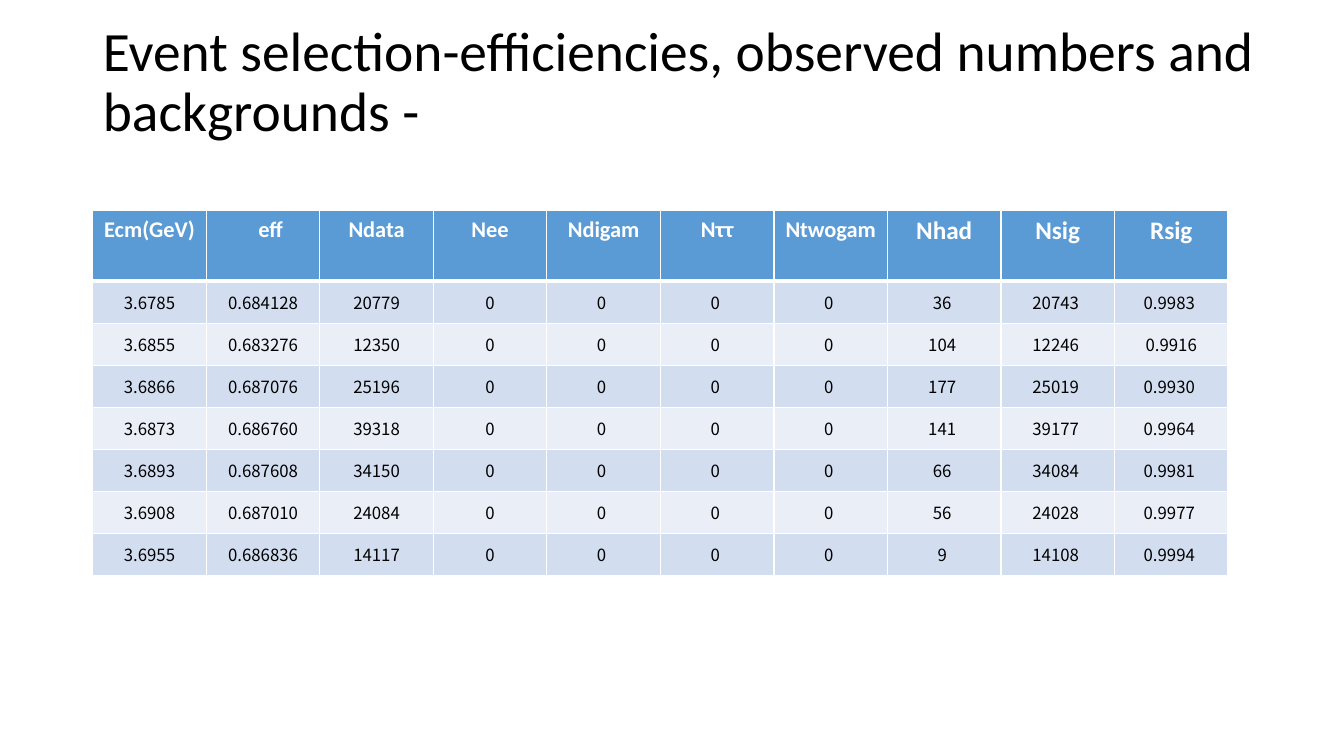
from dataclasses import dataclass

from lxml import etree
from pptx import Presentation
from pptx.dml.color import RGBColor
from pptx.enum.text import MSO_ANCHOR, MSO_AUTO_SIZE, PP_ALIGN
from pptx.oxml.ns import qn
from pptx.util import Inches, Pt

TOP, MIDDLE = MSO_ANCHOR.TOP, MSO_ANCHOR.MIDDLE
LEFT, CENTER = PP_ALIGN.LEFT, PP_ALIGN.CENTER
NO_AUTOFIT = MSO_AUTO_SIZE.NONE
TITLE_ONLY = 5

TITLE = "Event selection-efficiencies, observed numbers and backgrounds -"
HEADERS = ["Ecm(GeV)", "eff", "Ndata", "Nee", "Ndigam", "Nττ", "Ntwogam",
           "Nhad", "Nsig", "Rsig"]
LARGE_HEADERS = {"Nhad", "Nsig", "Rsig"}
# Energy, efficiency, Ndata, Nhad, Nsig, Rsig; the other backgrounds are all zero
MEASUREMENTS = [
    ("3.6785", "0.684128", "20779", "36", "20743", "0.9983"),
    ("3.6855", "0.683276", "12350", "104", "12246", "0.9916"),
    ("3.6866", "0.687076", "25196", "177", "25019", "0.9930"),
    ("3.6873", "0.686760", "39318", "141", "39177", "0.9964"),
    ("3.6893", "0.687608", "34150", "66", "34084", "0.9981"),
    ("3.6908", "0.687010", "24084", "56", "24028", "0.9977"),
    ("3.6955", "0.686836", "14117", "9", "14108", "0.9994"),
]
ZERO_BACKGROUNDS = ("0",) * 4


@dataclass(frozen=True)
class Theme:
    text: str = "000000"
    header_text: str = "FFFFFF"
    header_fill: str = "5B9BD5"
    bands: tuple = ("D2DEEF", "EAEFF7")
    border: str = "FFFFFF"
    font: str = "Calibri"
    number_font: str = "Noto Sans CJK SC"
    title_size: float = 39.6
    header_size: float = 16
    large_header_size: float = 18
    number_size: float = 12


class SlideBuilder:
    def __init__(self, slide, theme):
        self.slide = slide
        self.theme = theme

    def format_text(self, paragraph, font_name, size, color, bold, alignment):
        paragraph.alignment = alignment
        for run in paragraph.runs:
            run.font.name = font_name
            run.font.size = Pt(size)
            run.font.bold = bold
            run.font.color.rgb = RGBColor.from_string(color)

    def add_title(self, text, left, top, width, height):
        title = self.slide.shapes.title
        title.left, title.top = Inches(left), Inches(top)
        title.width, title.height = Inches(width), Inches(height)
        frame = title.text_frame
        frame.text = text
        frame.word_wrap = True
        frame.auto_size = NO_AUTOFIT
        frame.vertical_anchor = MIDDLE
        frame.margin_bottom = Inches(0.65)
        paragraph = frame.paragraphs[0]
        paragraph.line_spacing = 0.9
        self.format_text(paragraph, self.theme.font, self.theme.title_size,
                         self.theme.text, False, LEFT)

    def set_borders(self, cell, **widths):
        """Draw the sides lnL, lnR, lnT and lnB, given in points in that order."""
        properties = cell._tc.get_or_add_tcPr()
        for side, width in widths.items():
            line = etree.SubElement(properties, qn(f"a:{side}"), w=str(Pt(width)))
            fill = etree.SubElement(line, qn("a:solidFill"))
            etree.SubElement(fill, qn("a:srgbClr"), val=self.theme.border)

    def fill_cell(self, cell, color):
        cell.fill.solid()
        cell.fill.fore_color.rgb = RGBColor.from_string(color)

    def format_header(self, cell, text):
        theme = self.theme
        self.set_borders(cell, lnL=1, lnR=1, lnT=1, lnB=3)
        self.fill_cell(cell, theme.header_fill)
        cell.text_frame.text = text
        cell.vertical_anchor = TOP
        if text == "eff":
            cell.margin_left = Inches(0.25)
        size = theme.large_header_size if text in LARGE_HEADERS else theme.header_size
        self.format_text(cell.text_frame.paragraphs[0], theme.font, size,
                         theme.header_text, True, CENTER)

    def format_number(self, cell, text, row, column):
        theme = self.theme
        self.set_borders(cell, lnL=1, lnR=1, lnT=3 if row == 0 else 1, lnB=1)
        self.fill_cell(cell, theme.bands[row % 2])
        cell.text_frame.text = text
        cell.vertical_anchor = MIDDLE
        cell.margin_left = cell.margin_top = cell.margin_bottom = 0
        cell.margin_right = Inches(0.04 if column >= 4 and text != "0.9916" else 0)
        self.format_text(cell.text_frame.paragraphs[0], theme.number_font,
                         theme.number_size, theme.text, False, CENTER)

    def add_table(self, headers, rows, left, top, width, height, header_height):
        table = self.slide.shapes.add_table(
            len(rows) + 1, len(headers), Inches(left), Inches(top),
            Inches(width), Inches(height)).table
        for column in table.columns:
            column.width = Inches(width / len(headers))
        for row in table.rows:
            row.height = Inches((height - header_height) / len(rows))
        table.rows[0].height = Inches(header_height)
        for column, text in enumerate(headers):
            self.format_header(table.cell(0, column), text)
        for row, values in enumerate(rows):
            for column, text in enumerate(values):
                self.format_number(table.cell(row + 1, column), text, row, column)


def main():
    presentation = Presentation()
    presentation.slide_width = Inches(13.33)
    presentation.slide_height = Inches(7.5)
    slide = presentation.slides.add_slide(presentation.slide_layouts[TITLE_ONLY])
    builder = SlideBuilder(slide, Theme())
    builder.add_title(TITLE, 0.92, 0.4, 12.38, 1.45)
    rows = [values[:3] + ZERO_BACKGROUNDS + values[3:] for values in MEASUREMENTS]
    builder.add_table(HEADERS, rows, 0.92, 2.09, 11.26, 3.62, header_height=0.7)
    presentation.save("out.pptx")


if __name__ == "__main__":
    main()
